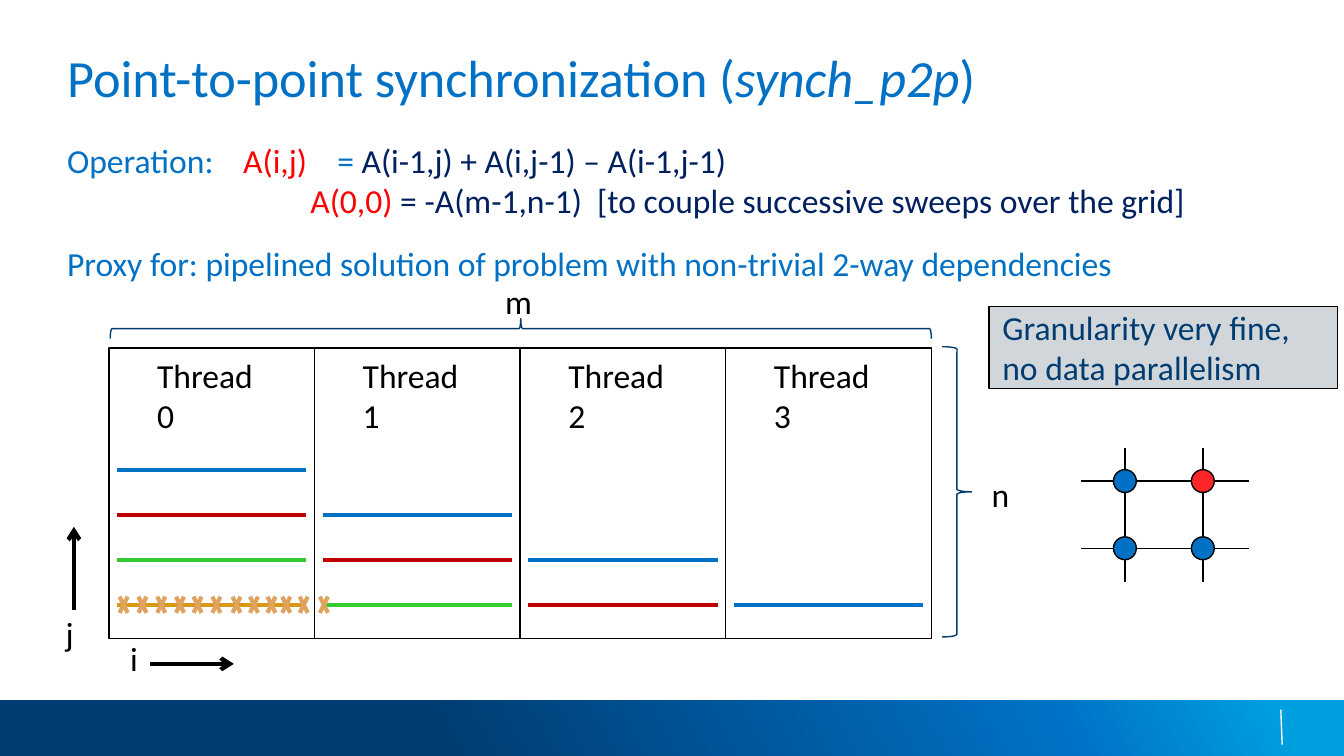
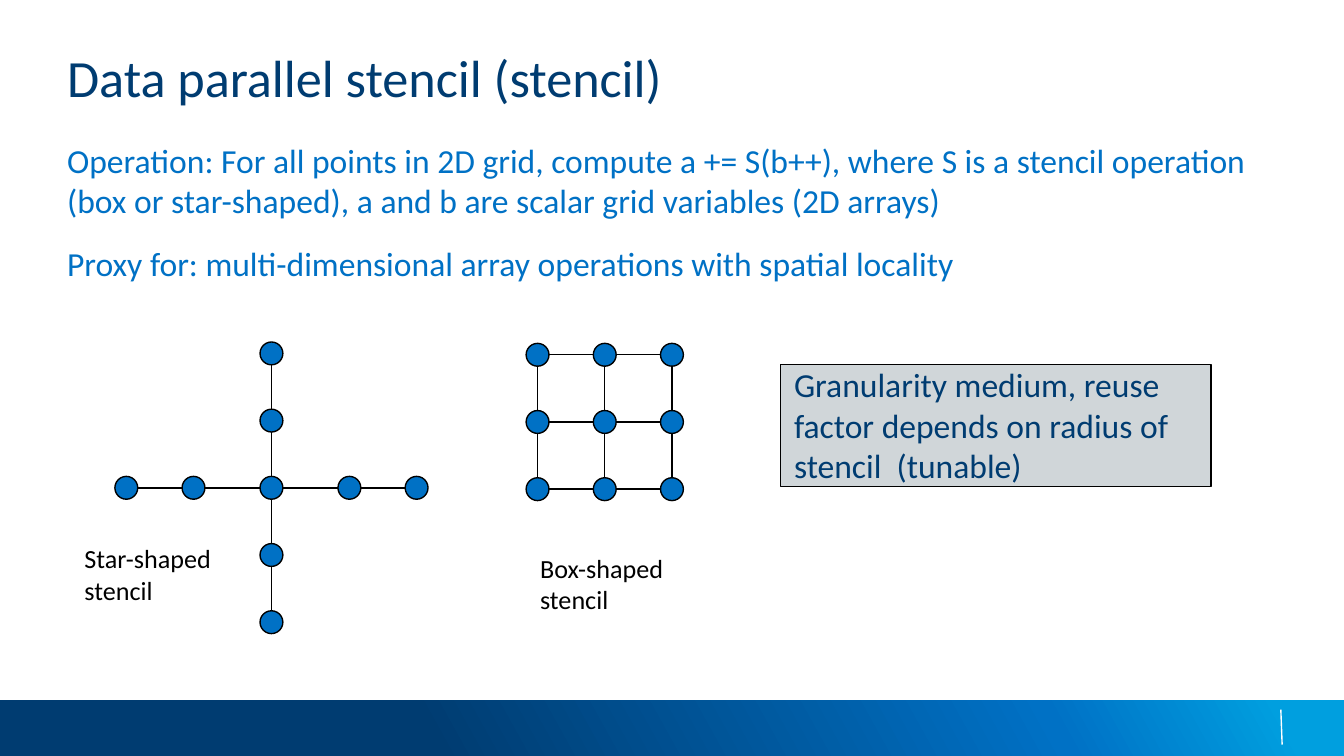
from copy import deepcopy

from lxml import etree
from pptx import Presentation
from pptx.dml.color import RGBColor
from pptx.enum.shapes import MSO_CONNECTOR, MSO_SHAPE
from pptx.enum.text import MSO_ANCHOR, PP_ALIGN
from pptx.oxml.ns import qn
from pptx.util import Inches, Pt

STRAIGHT = MSO_CONNECTOR.STRAIGHT
RECTANGLE, OVAL, BRACE = MSO_SHAPE.RECTANGLE, MSO_SHAPE.OVAL, MSO_SHAPE.RIGHT_BRACE
TOP, LEFT = MSO_ANCHOR.TOP, PP_ALIGN.LEFT

COLORS = {
    "white": "FFFFFF",
    "black": "000000",
    "navy": "003C71",
    "blue": "0071C5",
    "sky": "009FDF",
    "ink": "002060",
    "red": "FF0000",
    "target": "FD2727",
    "gray": "D0D6D9",
    "green": "33CC33",
    "crimson": "C00000",
    "gold": "D99815",
    "tan": "DFA25F",
}


def rgb(name):
    return RGBColor.from_string(COLORS[name])


def add_spans(para, text, size=18, color="black", before=0, tabs=()):
    para.alignment = LEFT
    para.space_before = Pt(before)
    if tabs:
        tab_list = etree.SubElement(para._p.get_or_add_pPr(), qn("a:tabLst"))
        for position in tabs:
            etree.SubElement(tab_list, qn("a:tab"), pos=str(Inches(position)), algn="l")
    spans = [(text, color, False)] if isinstance(text, str) else text
    for words, span_color, italic in spans:
        span = para.add_run()
        span.text = words
        span.font.name = "Calibri"
        span.font.size = Pt(size)
        span.font.italic = italic
        span.font.color.rgb = rgb(span_color)


class Page:
    dot_size = 0.17

    def __init__(self, deck, title, title_color):
        self.shapes = deck.slides.add_slide(deck.slide_layouts[6]).shapes
        self.footer()
        self.text(0.5, 0.34, 9, 0.56, [dict(text=title, size=28, color=title_color)], margins=(0, 0))

    def footer(self):
        band = self.shape(RECTANGLE, 0, 5.21, 10, 0.42, line=None)
        band.fill.gradient()
        band.fill.gradient_angle = 29
        stop_list = band._element.spPr.find(qn("a:gradFill")).find(qn("a:gsLst"))
        stop_list.append(deepcopy(stop_list[-1]))
        stops = ((0.32, "navy"), (0.78, "blue"), (0.95, "sky"))
        for stop, (position, color) in zip(band.fill.gradient_stops, stops):
            stop.position = position
            stop.color.rgb = rgb(color)
        self.line(9.53, 5.28, 9.54, 5.54, "white")

    def shape(self, kind, left, top, width, height, fill=None, line="black"):
        shape = self.shapes.add_shape(kind, Inches(left), Inches(top), Inches(width), Inches(height))
        shape.shadow.inherit = False
        if fill:
            shape.fill.solid()
            shape.fill.fore_color.rgb = rgb(fill)
        else:
            shape.fill.background()
        if line:
            shape.line.color.rgb = rgb(line)
            shape.line.width = Pt(0.75)
        else:
            shape.line.fill.background()
        return shape

    def line(self, x1, y1, x2, y2, color="black", width=0.75, arrow=False):
        line = self.shapes.add_connector(STRAIGHT, Inches(x1), Inches(y1), Inches(x2), Inches(y2))
        line.line.color.rgb = rgb(color)
        line.line.width = Pt(width)
        if arrow:
            etree.SubElement(line.line._get_or_add_ln(), qn("a:tailEnd"), type="arrow")
        etree.SubElement(line._element.spPr, qn("a:effectLst"))

    def dot(self, x, y, color="blue"):
        size = self.dot_size
        self.shape(OVAL, x - size / 2, y - size / 2, size, size, color)

    def fill_text(self, box, paragraphs, margins):
        frame = box.text_frame
        frame.word_wrap = True
        frame.vertical_anchor = TOP
        frame.margin_left = frame.margin_right = Inches(margins[0])
        frame.margin_top = frame.margin_bottom = Inches(margins[1])
        for index, options in enumerate(paragraphs):
            para = frame.add_paragraph() if index else frame.paragraphs[0]
            add_spans(para, **options)

    def text(self, left, top, width, height, paragraphs, margins=(0.1, 0.05)):
        box = self.shapes.add_textbox(Inches(left), Inches(top), Inches(width), Inches(height))
        self.fill_text(box, paragraphs, margins)

    def label(self, left, top, width, *lines, size=18):
        height = 0.4 if len(lines) == 1 else 0.57
        self.text(left, top, width, height, [dict(text=line, size=size) for line in lines])

    def body(self, paragraphs, width=9):
        self.text(0.5, 1.04, width, 4.02, paragraphs, margins=(0, 0))

    def callout(self, left, top, width, height, text):
        box = self.shape(RECTANGLE, left, top, width, height, "gray")
        self.fill_text(box, [dict(text=text, color="navy")], (0.1, 0))


def draw_threads(page):
    left, top, width, height, column = 0.81, 2.59, 6.12, 2.16, 1.53
    page.shape(RECTANGLE, left, top, width, height)
    sweeps = ("gold", "green", "crimson", "blue")
    for thread in range(4):
        x = left + column * thread
        if thread:
            page.line(x, top, x, top + height)
        page.label(x + 0.26, top, 1.01, f"Thread {thread}")
        for row in range(4 - thread):
            y = 4.5 - row / 3
            page.line(x + 0.06, y, x + 1.47, y, sweeps[thread + row], 2.25)
    for x in (0.92, 1.06, 1.2, 1.34, 1.47, 1.61, 1.76, 1.89, 2.02, 2.13, 2.26, 2.41):
        for slope in (-0.06, 0.06):
            page.line(x + 0.03, 4.5 + slope, x - 0.03, 4.5 - slope, "tan", 2.25)


def draw_dependencies(page):
    columns, rows = (8.37, 8.95), (3.58, 4.08)
    for x in columns:
        page.line(x, 4.33, x, 3.33)
    for y in rows:
        page.line(8.04, y, 9.29, y)
    for x in columns:
        for y in rows:
            page.dot(x, y, "target" if (x, y) == (columns[1], rows[0]) else "blue")


def build_synchronization(deck):
    title = [
        ("Point-to-point synchronization (", "blue", False),
        ("synch_p2p", "blue", True),
        (")", "blue", False),
    ]
    page = Page(deck, title, "blue")
    update = [
        ("Operation: \t", "blue", False),
        ("A(i,j)\t", "red", False),
        ("= ", "blue", False),
        ("A(i-1,j) + A(i,j-1) – A(i-1,j-1)", "ink", False),
    ]
    coupling = [
        ("\tA(0,0)", "red", False),
        (" = -A(m-1,n-1)  [to couple successive sweeps over the grid]", "ink", False),
    ]
    proxy = "Proxy for: pipelined solution of problem with non-trivial 2-way dependencies"
    page.body([
        dict(text=update, tabs=(1.31, 2.01)),
        dict(text=coupling, tabs=(1.81,)),
        dict(text=proxy, color="blue", before=12),
    ], width=8.97)
    draw_dependencies(page)
    draw_threads(page)
    page.line(0.55, 4.54, 0.55, 3.92, width=2.25, arrow=True)
    page.line(1.12, 4.94, 1.74, 4.94, width=2.25, arrow=True)
    page.label(0.39, 4.51, 0.26, "j")
    page.label(0.87, 4.7, 0.26, "i")
    page.callout(7.36, 2.28, 2.59, 0.61, "Granularity very fine, no data parallelism")
    page.shape(BRACE, 3.8, -0.61, 0.15, 6.11, line="navy").rotation = 270
    page.label(3.66, 2.04, 0.42, "m")
    page.shape(BRACE, 7.01, 2.58, 0.22, 2.16, line="navy")
    page.label(7.28, 3.48, 0.35, "n")


def draw_star(page):
    center_x, center_y = 2.02, 3.63
    page.line(center_x, 4.63, center_x, 2.63)
    page.line(0.94, center_y, 3.1, center_y)
    for x in (0.94, 1.44, 2.6, 3.1):
        page.dot(x, center_y)
    for step in range(-2, 3):
        page.dot(center_x, center_y + step * 0.5)


def draw_box(page):
    columns, rows = (4, 4.5, 5), (2.64, 3.14, 3.64)
    for x, y in zip(columns, rows):
        page.line(columns[0], y, columns[-1], y)
        page.line(x, rows[-1], x, rows[0])
    for x in columns:
        for y in rows:
            page.dot(x, y)


def build_stencil(deck):
    page = Page(deck, "Data parallel stencil (stencil)", "navy")
    operation = (
        "Operation: For all points in 2D grid, compute a += S(b++), where S is a stencil operation "
        "(box or star-shaped), a and b are scalar grid variables (2D arrays)"
    )
    proxy = "Proxy for: multi-dimensional array operations with spatial locality"
    page.body([dict(text=operation, color="blue"), dict(text=proxy, color="blue", before=12)])
    draw_star(page)
    draw_box(page)
    page.label(0.53, 3.99, 1.41, "Star-shaped", "stencil", size=14)
    page.label(3.92, 4.06, 1.26, "Box-shaped", "stencil", size=14)
    page.callout(
        5.81, 2.71, 3.2, 0.91,
        "Granularity medium, reuse factor depends on radius of stencil  (tunable)",
    )


def main():
    deck = Presentation()
    deck.slide_width = Inches(10)
    deck.slide_height = Inches(10) * 9 // 16
    build_synchronization(deck)
    build_stencil(deck)
    deck.save("out.pptx")


if __name__ == "__main__":
    main()
